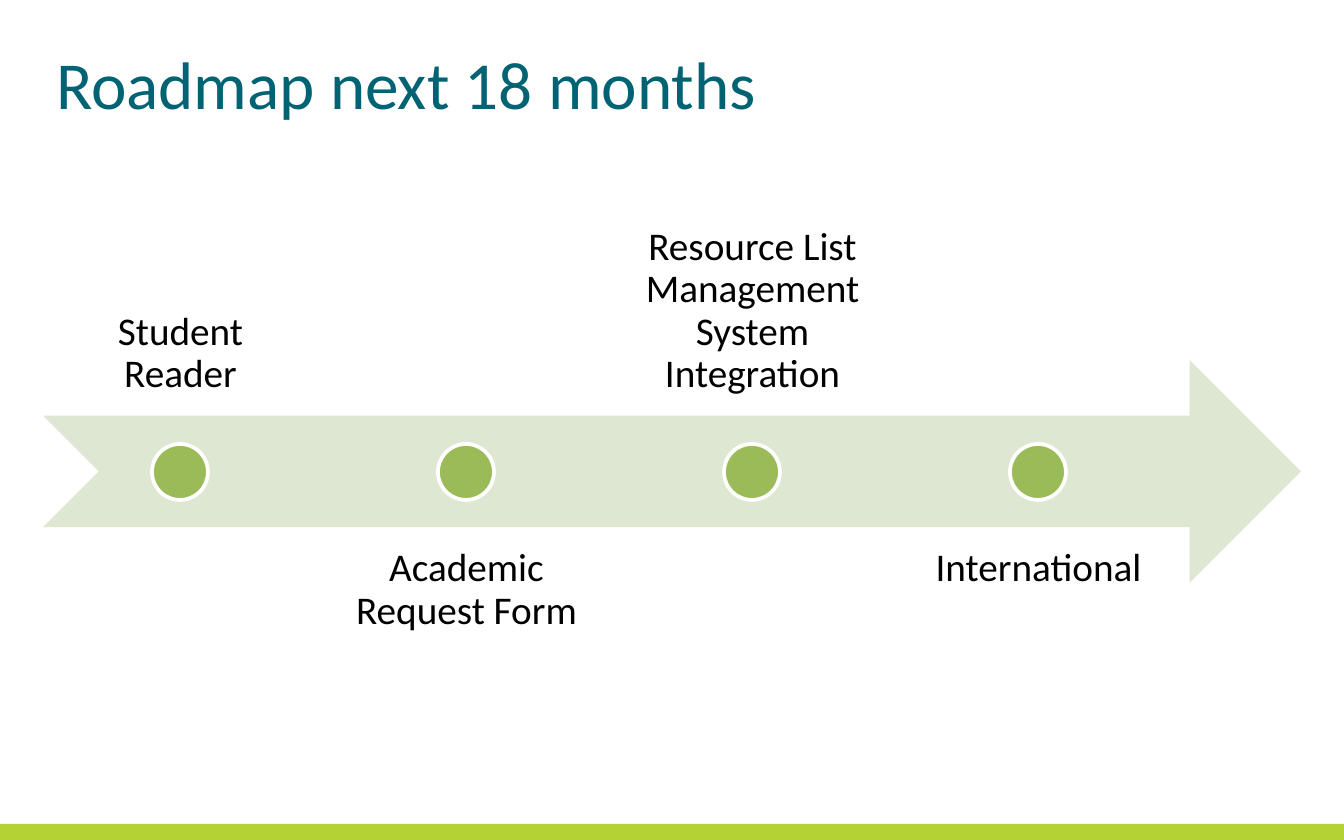
from pptx import Presentation
from pptx.dml.color import RGBColor
from pptx.enum.shapes import MSO_SHAPE
from pptx.enum.text import MSO_ANCHOR, PP_ALIGN
from pptx.util import Pt

RECTANGLE = MSO_SHAPE.RECTANGLE
ARROW = MSO_SHAPE.NOTCHED_RIGHT_ARROW
CIRCLE = MSO_SHAPE.OVAL
TOP, MIDDLE, BOTTOM = MSO_ANCHOR.TOP, MSO_ANCHOR.MIDDLE, MSO_ANCHOR.BOTTOM
LEFT, CENTER = PP_ALIGN.LEFT, PP_ALIGN.CENTER

EMU_PER_PX = 914400 / 134.4
SLIDE_WIDTH, SLIDE_HEIGHT = 1344, 840


def px(length):
    return round(length * EMU_PER_PX)


def color(hex_code):
    return RGBColor.from_string(hex_code)


class RoadmapSlide:
    FONT = "Calibri"
    TEAL, LIME = "006373", "B4D234"
    PALE_GREEN, GREEN = "DEE7D1", "9BBB59"
    BLACK, WHITE = "000000", "FFFFFF"

    def __init__(self, slide):
        self.slide = slide

    def shape(self, kind, left, top, width, height, fill, outline=None):
        shape = self.slide.shapes.add_shape(
            kind, px(left), px(top), px(width), px(height))
        shape.shadow.inherit = False
        shape.fill.solid()
        shape.fill.fore_color.rgb = color(fill)
        if outline:
            shape.line.color.rgb = color(outline)
            shape.line.width = Pt(2)
        else:
            shape.line.fill.background()

    def text(self, words, left, top, width, height, size, ink,
             anchor, align, inset_x, inset_y, spacing=1.0):
        box = self.slide.shapes.add_textbox(
            px(left), px(top), px(width), px(height))
        frame = box.text_frame
        frame.word_wrap = True
        frame.vertical_anchor = anchor
        frame.margin_left = frame.margin_right = px(inset_x)
        frame.margin_top = frame.margin_bottom = px(inset_y)
        paragraph = frame.paragraphs[0]
        paragraph.alignment = align
        paragraph.line_spacing = spacing
        run = paragraph.add_run()
        run.text = words
        run.font.name = self.FONT
        run.font.size = Pt(size)
        run.font.color.rgb = color(ink)

    def title(self, words, left, top, width, height):
        self.text(words, left, top, width, height, 36, self.TEAL,
                  MIDDLE, LEFT, 13, 7)

    def milestone(self, words, center_x, center_y, above, label_height):
        label_width, dot = 273, 56
        gap = label_height // 4
        top = center_y - gap - label_height if above else center_y + gap
        self.text(words, center_x - label_width // 2, top, label_width,
                  label_height, 21, self.BLACK, BOTTOM if above else TOP,
                  CENTER, 21, 21, 0.9)
        self.shape(CIRCLE, center_x - dot // 2, center_y - dot // 2,
                   dot, dot, self.GREEN, self.WHITE)


def main():
    deck = Presentation()
    deck.slide_width, deck.slide_height = px(SLIDE_WIDTH), px(SLIDE_HEIGHT)
    roadmap = RoadmapSlide(deck.slides.add_slide(deck.slide_layouts[6]))

    # Footer band and title
    band_height = 16
    roadmap.shape(RECTANGLE, 0, SLIDE_HEIGHT - band_height, SLIDE_WIDTH,
                  band_height, roadmap.LIME)
    margin = 43
    content_width = SLIDE_WIDTH - 2 * margin
    roadmap.title("Roadmap next 18 months", margin, 48, content_width, 70)

    # Timeline arrow
    arrow_top, arrow_height = 360, 223
    roadmap.shape(ARROW, margin, arrow_top, content_width, arrow_height,
                  roadmap.PALE_GREEN)

    # Milestones, labelled above and below the arrow in turn
    first_center, pitch = 180, 286
    milestones = ["Student Reader", "Academic Request Form",
                  "Resource List Management System Integration",
                  "International"]
    for index, words in enumerate(milestones):
        roadmap.milestone(words, first_center + index * pitch,
                          arrow_top + arrow_height // 2 + 1,
                          index % 2 == 0, arrow_height)

    deck.save("out.pptx")


if __name__ == "__main__":
    main()
